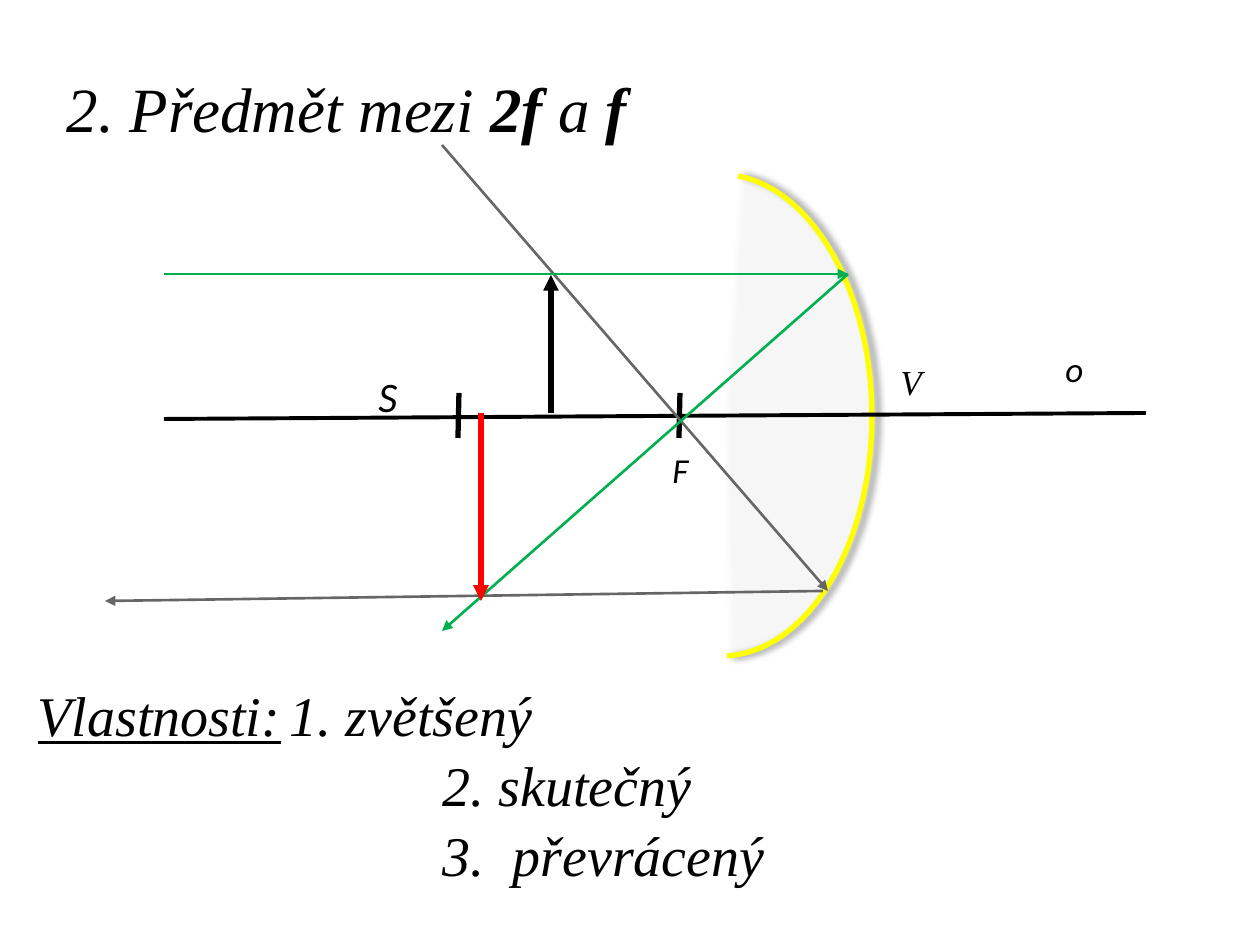
import copy

import pptx
import pptx.util
import pptx.dml.color
import pptx.enum.shapes
import pptx.enum.text
import pptx.oxml
import pptx.oxml.ns

PX = 914400 / 126
RGB = pptx.dml.color.RGBColor
BLACK = RGB(0x00, 0x00, 0x00)
WHITE = RGB(0xFF, 0xFF, 0xFF)
GRAY = RGB(0x66, 0x66, 0x66)
GREEN = RGB(0x00, 0xB0, 0x50)
RED = RGB(0xFF, 0x00, 0x00)
YELLOW = RGB(0xFF, 0xFF, 0x00)
SERIF, SANS = "Times New Roman", "Calibri"
qn = pptx.oxml.ns.qn


def emu(px):
    return pptx.util.Emu(round(px * PX))


def add_xml(parent, tag, **attributes):
    """Append a drawing element to parent and return it."""
    child = pptx.oxml.parse_xml(f"<a:{tag} {pptx.oxml.ns.nsdecls('a')}/>")
    for name, value in attributes.items():
        child.set(name, str(value))
    parent.append(child)
    return child


def add_run(paragraph, text, size=20, font=SERIF, bold=False, underline=False):
    run = paragraph.add_run()
    run.text = text
    run.font.size = pptx.util.Pt(size)
    run.font.name = font
    run.font.italic = True
    run.font.bold = bold
    run.font.underline = underline
    run.font.color.rgb = BLACK


def bezier(p0, p1, p2, p3, steps=24):
    """Points of a cubic curve after its start."""
    for i in range(1, steps + 1):
        t = i / steps
        u = 1 - t
        yield tuple(u**3 * a + 3 * u * u * t * b + 3 * u * t * t * c + t**3 * d
                    for a, b, c, d in zip(p0, p1, p2, p3))


class Diagram:
    def __init__(self, slide):
        self.slide = slide

    def placeholder(self, index, x, y, w, h):
        shape = self.slide.placeholders[index]
        shape.left, shape.top, shape.width, shape.height = map(emu, (x, y, w, h))
        frame = shape.text_frame
        frame.word_wrap = True
        frame.auto_size = pptx.enum.text.MSO_AUTO_SIZE.NONE
        frame.vertical_anchor = pptx.enum.text.MSO_ANCHOR.MIDDLE
        return frame

    def label(self, text, x, y, w, h, **style):
        frame = self.slide.shapes.add_textbox(*map(emu, (x, y, w, h))).text_frame
        frame.word_wrap = True
        add_run(frame.paragraphs[0], text, **style)

    def line(self, start, end, color, width, arrow=False):
        connector = self.slide.shapes.add_connector(
            pptx.enum.shapes.MSO_CONNECTOR.STRAIGHT, *map(emu, (*start, *end)))
        connector.line.color.rgb = color
        connector.line.width = pptx.util.Pt(width)
        properties = connector._element.spPr
        if arrow:
            add_xml(properties.find(qn("a:ln")), "tailEnd", type="triangle")
        add_xml(properties, "effectLst")

    def mirror(self, arc, center):
        """A faint sector of which only the arc is stroked."""
        points = [(emu(x), emu(y)) for x, y in [*arc, center]]
        builder = self.slide.shapes.build_freeform(*points[0], scale=1.0)
        builder.add_line_segments(points[1:], close=True)
        shape = builder.convert_to_shape()
        shape.fill.solid()
        shape.fill.fore_color.rgb = WHITE
        properties = shape._element.spPr
        add_xml(properties.find(".//" + qn("a:srgbClr")), "alpha", val=10000)
        shape.line.color.rgb = YELLOW
        shape.line.width = pptx.util.Pt(3)
        shape.shadow.inherit = False
        shadow = add_xml(properties.find(qn("a:effectLst")), "outerShdw",
                         blurRad=50800, dist=38100, dir=0, rotWithShape=0)
        add_xml(add_xml(shadow, "srgbClr", val="000000"), "alpha", val=40000)
        # Split into a filled sector and an open stroked arc
        sector = properties.find(".//" + qn("a:path"))
        outline = copy.deepcopy(sector)
        sector.set("stroke", "0")
        outline.set("fill", "none")
        for step in outline[-2:]:
            outline.remove(step)
        sector.addnext(outline)


def main():
    deck = pptx.Presentation()
    deck.slide_width, deck.slide_height = emu(1260), emu(945)
    slide = deck.slides.add_slide(deck.slide_layouts[1])
    diagram = Diagram(slide)

    # Title
    heading = diagram.placeholder(0, 54, 49, 1176, 116).paragraphs[0]
    heading.alignment = pptx.enum.text.PP_ALIGN.LEFT
    for text, bold in (("2. Předmět mezi ", False), ("2f", True),
                       (" a ", False), ("f", True)):
        add_run(heading, text, size=36, bold=bold)

    # Concave mirror
    top, vertex, bottom = (738, 176), (872, 416), (727, 656)
    arc = [top, *bezier(top, (814, 190), (872, 294), vertex),
           *bezier(vertex, (872, 546), (808, 651), bottom)]
    diagram.mirror(arc, (722, 416))

    # Optical axis with the centre and focus marks
    diagram.line((164, 419), (1146, 413), BLACK, 2.25)
    for x in (680, 459):
        diagram.line((x, 393), (x - 1, 438), BLACK, 3)

    # Rays through the focus and parallel to the axis
    for start, end, color in (((442, 145), (828, 591), GRAY),
                              ((823, 591), (105, 601), GRAY),
                              ((164, 274), (848, 274), GREEN),
                              ((848, 274), (442, 631), GREEN)):
        diagram.line(start, end, color, 1.5, arrow=True)

    # Object and its image
    diagram.line((551, 413), (551, 275), BLACK, 3, arrow=True)
    diagram.line((481, 413), (481, 601), RED, 3, arrow=True)

    # Point labels
    diagram.label("o", 1053, 341, 59, 63, font=SANS)
    diagram.label("F", 660, 442, 64, 55, font=SANS)
    diagram.label("S", 366, 364, 62, 63, font=SANS, size=24)
    diagram.label("V", 888, 354, 49, 55)

    # Image properties
    traits = diagram.placeholder(1, 25, 670, 942, 228)
    for i, text in enumerate(("\t1. zvětšený", "2. skutečný", "3.  převrácený")):
        paragraph = traits.paragraphs[0] if i == 0 else traits.add_paragraph()
        paragraph.space_before = pptx.util.Pt(1.5 if i else 0)
        layout = paragraph._p.get_or_add_pPr()
        layout.set("marL", str(emu(405) if i else 0))
        layout.set("indent", "0")
        add_xml(layout, "buNone")
        if i == 0:
            add_xml(add_xml(layout, "tabLst"), "tab", pos=emu(285), algn="l")
            add_run(paragraph, "Vlastnosti:", size=32, underline=True)
        add_run(paragraph, text, size=32)

    deck.save("out.pptx")


if __name__ == "__main__":
    main()
